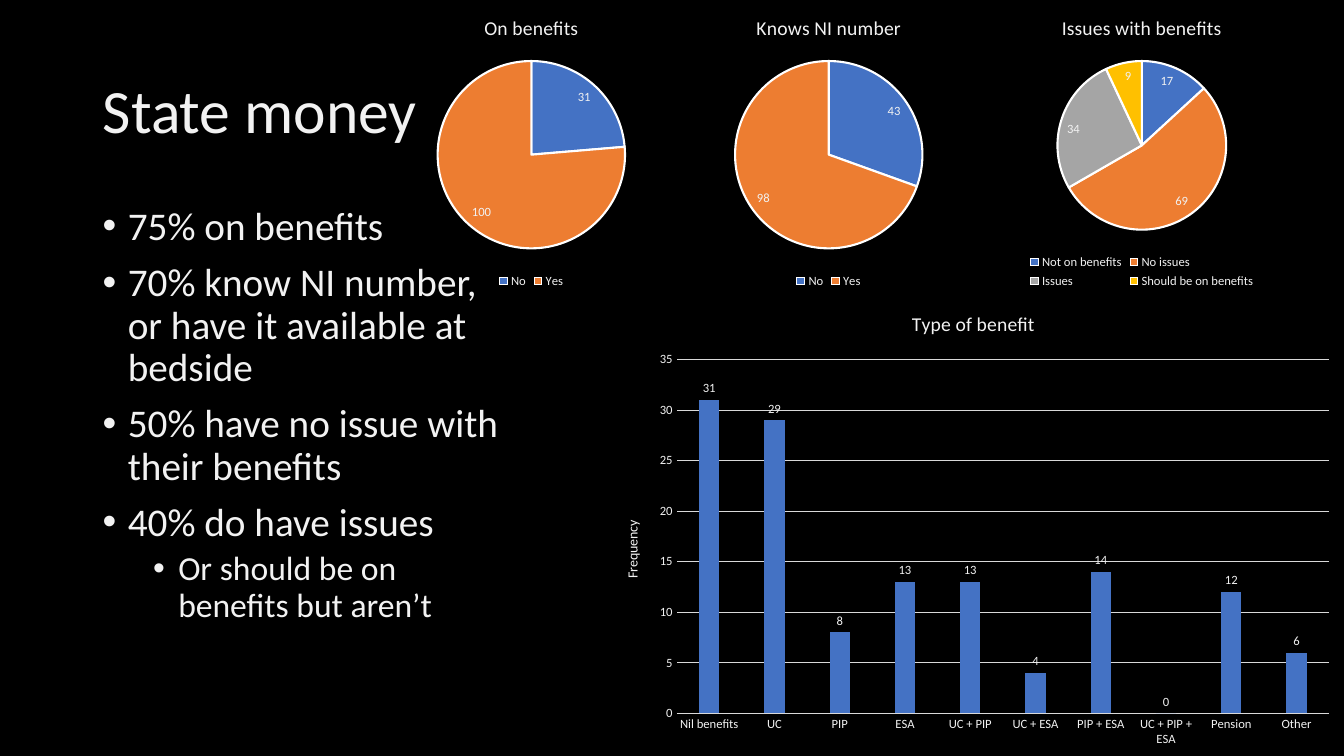
from lxml import etree
from pptx import Presentation
from pptx import util as u
from pptx.chart.data import CategoryChartData
from pptx.dml.color import RGBColor
from pptx.enum import chart as ch, text
from pptx.oxml.ns import qn

BLACK = RGBColor(0x00, 0x00, 0x00)
WHITE = RGBColor(0xFF, 0xFF, 0xFF)
PALE = RGBColor(0xF2, 0xF2, 0xF2)
GRID = RGBColor(0xD9, 0xD9, 0xD9)
BLUE = RGBColor(0x44, 0x72, 0xC4)
ORANGE = RGBColor(0xED, 0x7D, 0x31)
GREY = RGBColor(0xA5, 0xA5, 0xA5)
GOLD = RGBColor(0xFF, 0xC0, 0x00)
SLICES = [BLUE, ORANGE, GREY, GOLD]


class Deck:
    """Style and current slide, with one method per kind of element."""

    font = "Calibri"

    def __init__(self, width, height):
        self.prs = Presentation()
        self.prs.slide_width = u.Inches(width)
        self.prs.slide_height = u.Inches(height)
        self.s = self.prs.slides.add_slide(self.prs.slide_layouts[5])
        self.s.background.fill.solid()
        self.s.background.fill.fore_color.rgb = BLACK

    def style(self, font, size):
        font.name = self.font
        font.size = u.Pt(size)
        font.bold = False
        font.color.rgb = PALE

    def title(self, words, *box):
        sp = self.s.shapes.title
        sp.left, sp.top, sp.width, sp.height = map(u.Inches, box)
        tf = sp.text_frame
        tf.text = words
        tf.vertical_anchor = text.MSO_ANCHOR.MIDDLE
        p = tf.paragraphs[0]
        p.alignment = text.PP_ALIGN.LEFT
        p.line_spacing = 0.9
        self.style(p.runs[0].font, 44)

    def bullets(self, items, *box):
        tf = self.s.shapes.add_textbox(*map(u.Inches, box)).text_frame
        tf.word_wrap = True
        tf.text = "\n".join(words for words, _ in items)
        for p, (_, level) in zip(tf.paragraphs, items):
            p.level = level
            p.line_spacing = 0.9
            p.space_before = u.Pt(5 if level else 10)
            self.style(p.runs[0].font, 24 if level else 28)
            pPr = p._p.get_or_add_pPr()
            pPr.set("marL", str(u.Inches(0.25 + 0.5 * level)))
            pPr.set("indent", str(u.Inches(-0.25)))
            etree.SubElement(pPr, qn("a:buFont"), typeface="Arial")
            etree.SubElement(pPr, qn("a:buChar"), char="•")

    def chart(self, kind, heading, values, box, label_place, name=None):
        data = CategoryChartData()
        data.categories = list(values)
        data.add_series(name or heading, list(values.values()))
        chart = self.s.shapes.add_chart(kind, *map(u.Inches, box), data).chart
        self.style(chart.font, 10)
        self.caption(chart, heading, 14)
        chart.has_legend = False
        plot = chart.plots[0]
        plot.has_data_labels = True
        labels = plot.data_labels
        labels.show_value = True
        labels.position = label_place
        self.style(labels.font, 9)
        return chart

    def caption(self, owner, words, size):
        title = owner.chart_title if hasattr(owner, "chart_title") else owner.axis_title
        tf = title.text_frame
        tf.text = words
        self.style(tf.paragraphs[0].runs[0].font, size)

    def pie(self, heading, values, *box, name=None):
        chart = self.chart(ch.XL_CHART_TYPE.PIE, heading, values, box,
                           ch.XL_LABEL_POSITION.INSIDE_END, name)
        chart.has_legend = True
        chart.legend.position = ch.XL_LEGEND_POSITION.BOTTOM
        chart.legend.include_in_layout = False
        self.style(chart.legend.font, 9)
        plot = chart.plots[0]
        plot.vary_by_categories = True
        for i, colour in zip(range(len(values)), SLICES):
            form = plot.series[0].points[i].format
            form.fill.solid()
            form.fill.fore_color.rgb = colour
            form.line.color.rgb = WHITE
            form.line.width = u.Pt(1.5)

    def columns(self, heading, values, axis_name, *box):
        chart = self.chart(ch.XL_CHART_TYPE.COLUMN_CLUSTERED, heading, values, box,
                           ch.XL_LABEL_POSITION.OUTSIDE_END)
        plot = chart.plots[0]
        plot.vary_by_categories = False
        plot.gap_width = 219
        plot.overlap = -27
        fill = plot.series[0].format.fill
        fill.solid()
        fill.fore_color.rgb = BLUE

        cats, vals = chart.category_axis, chart.value_axis
        for axis in (cats, vals):
            axis.major_tick_mark = axis.minor_tick_mark = ch.XL_TICK_MARK.NONE
            self.style(axis.tick_labels.font, 9)
        vals.minimum_scale, vals.maximum_scale, vals.major_unit = 0, 35, 5
        vals.format.line.fill.background()
        vals.has_major_gridlines = True
        for line in (cats.format.line, vals.major_gridlines.format.line):
            line.color.rgb = GRID
            line.width = u.Pt(0.75)
        self.caption(vals, axis_name, 10)


def main():
    deck = Deck(13.33, 7.5)

    # Title and findings
    deck.title("State money", 0.92, 0.4, 11.5, 1.45)
    deck.bullets([
        ("75% on benefits", 0),
        ("70% know NI number, or have it available at bedside", 0),
        ("50% have no issue with their benefits", 0),
        ("40% do have issues", 0),
        ("Or should be on benefits but aren’t", 1),
    ], 0.92, 2, 4.14, 5.5)

    # Pies along the top
    deck.pie("On benefits", {"No": 31, "Yes": 100}, 2.77, 0, 5, 2.9)
    deck.pie("Issues with benefits",
             {"Not on benefits": 17, "No issues": 69, "Issues": 34,
              "Should be on benefits": 9}, 9.32, 0, 4.01, 2.9)

    # Columns below
    deck.columns("Type of benefit",
                 {"Nil benefits": 31, "UC": 29, "PIP": 8, "ESA": 13, "UC + PIP": 13,
                  "UC + ESA": 4, "PIP + ESA": 14, "UC + PIP + ESA": 0,
                  "Pension": 12, "Other": 6},
                 "Frequency", 5.98, 2.9, 7.35, 4.6)

    deck.pie("Knows NI number", {"No": 43, "Yes": 98}, 5.72, 0, 5, 2.9, name="Series 1")

    deck.prs.save("out.pptx")


if __name__ == "__main__":
    main()
